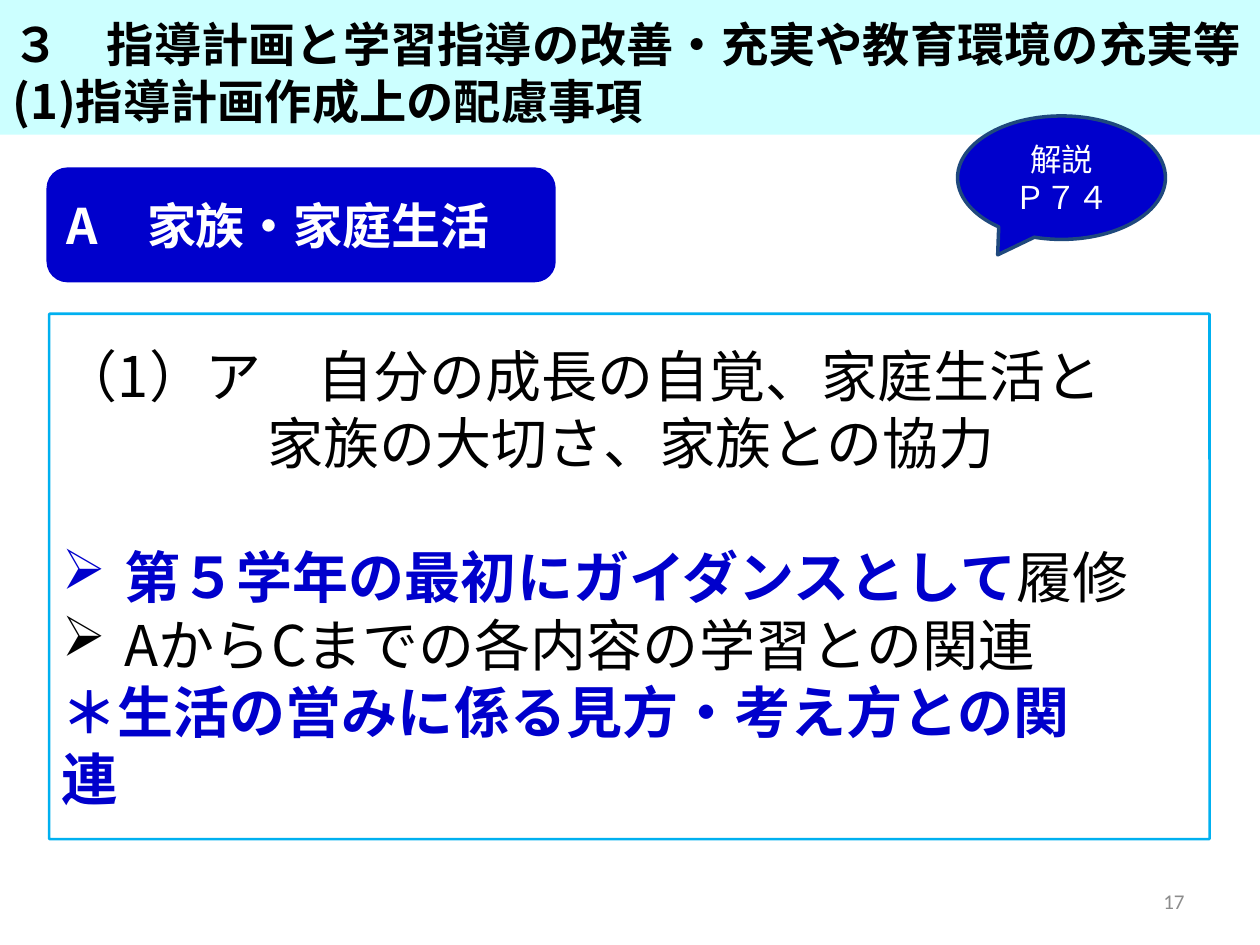
import dataclasses

import pptx
import pptx.dml.color
import pptx.enum.shapes
import pptx.enum.text
import pptx.oxml.ns
import pptx.util
from lxml import etree

Inches = pptx.util.Inches
Pt = pptx.util.Pt
Shapes = pptx.enum.shapes.MSO_SHAPE
Align = pptx.enum.text.PP_ALIGN
Anchor = pptx.enum.text.MSO_ANCHOR
qn = pptx.oxml.ns.qn


@dataclasses.dataclass(frozen=True)
class Theme:
    japanese_font: str = "Noto Sans CJK JP"
    number_font: str = "Calibri"
    black: str = "000000"
    white: str = "FFFFFF"
    blue: str = "0000CC"
    pale_cyan: str = "CCFFFF"
    cyan: str = "00B0F0"
    navy: str = "1F497D"
    grey: str = "8C8C8C"
    title_size: float = 27
    section_size: float = 28
    body_size: float = 32
    callout_size: float = 18
    number_size: float = 12
    line_height: float = 1.2


THEME = Theme()


def rgb(color):
    return pptx.dml.color.RGBColor.from_string(color)


def add_panel(slide, kind, box, fill=None, line=None, width=0,
              anchor=Anchor.MIDDLE, adjustments=()):
    shape = slide.shapes.add_shape(kind, *map(Inches, box))
    shape.shadow.inherit = False
    for index, value in enumerate(adjustments):
        shape.adjustments[index] = value
    if fill:
        shape.fill.solid()
        shape.fill.fore_color.rgb = rgb(fill)
    else:
        shape.fill.background()
    if line:
        shape.line.color.rgb = rgb(line)
        shape.line.width = Pt(width)
    else:
        shape.line.fill.background()
    shape.text_frame.word_wrap = True
    shape.text_frame.vertical_anchor = anchor
    return shape


def style_paragraph(paragraph, size, color, bold=False, align=Align.LEFT,
                    font=THEME.japanese_font):
    paragraph.alignment = align
    paragraph.line_spacing = Pt(size * THEME.line_height)
    paragraph.font.size = Pt(size)
    paragraph.font.bold = bold
    paragraph.font.color.rgb = rgb(color)
    paragraph.font.name = font
    defaults = paragraph.font._element
    defaults.find(qn("a:latin")).addnext(
        etree.Element(qn("a:ea"), typeface=font))


def write_lines(shape, lines, **style):
    frame = shape.text_frame
    paragraphs = []
    for index, line in enumerate(lines):
        paragraph = frame.add_paragraph() if index else frame.paragraphs[0]
        paragraph.text = line
        style_paragraph(paragraph, **style)
        paragraphs.append(paragraph)
    return paragraphs


def set_indent(paragraph, left, first=0, bullet=None):
    properties = paragraph._p.get_or_add_pPr()
    properties.set("marL", str(Inches(left)))
    properties.set("indent", str(Inches(first)))
    if bullet:
        character = etree.Element(qn("a:buChar"), char=bullet)
        properties.find(qn("a:defRPr")).addprevious(character)


def emphasize(run):
    run.font.bold = True
    run.font.color.rgb = rgb(THEME.blue)


def add_title(slide):
    banner = add_panel(slide, Shapes.RECTANGLE, (0, -0.03, 10, 1.1),
                       fill=THEME.pale_cyan, anchor=Anchor.BOTTOM)
    write_lines(banner, ["３　指導計画と学習指導の改善・充実や教育環境の充実等",
                         "(1)指導計画作成上の配慮事項"],
                size=THEME.title_size, color=THEME.black, bold=True)


def add_section_label(slide):
    label = add_panel(slide, Shapes.ROUNDED_RECTANGLE, (0.39, 1.35, 4, 0.87),
                      fill=THEME.blue, line=THEME.blue, width=3)
    write_lines(label, ["A　家族・家庭生活"],
                size=THEME.section_size, color=THEME.white, bold=True)


def add_content_box(slide):
    box = add_panel(slide, Shapes.ROUNDED_RECTANGLE, (0.39, 2.49, 9.21, 4.17),
                    line=THEME.cyan, width=1.5, adjustments=[0.002])
    heading, continuation, guidance, relation, viewpoint = write_lines(
        box, ["（1）ア　自分の成長の自覚、家庭生活と",
              "家族の大切さ、家族との協力",
              "第５学年の最初にガイダンスとして",
              "AからCまでの各内容の学習との関連",
              "＊生活の営みに係る見方・考え方との関\v連"],
        size=THEME.body_size, color=THEME.black)
    heading.alignment = Align.JUSTIFY
    set_indent(continuation, 1.63)
    guidance.space_before = Pt(THEME.body_size * THEME.line_height)
    for paragraph in (guidance, relation):
        set_indent(paragraph, 0.5, -0.5, "➢")
    emphasize(guidance.runs[0])
    guidance.add_run().text = "履修"
    for run in viewpoint.runs:
        emphasize(run)


def add_callout(slide):
    callout = add_panel(slide, Shapes.OVAL_CALLOUT, (7.6, 0.92, 1.65, 0.98),
                        fill=THEME.blue, line=THEME.navy, width=2,
                        adjustments=[-0.307, 0.625])
    write_lines(callout, ["解説", "Ｐ７４"], size=THEME.callout_size,
                color=THEME.white, align=Align.CENTER)


def add_page_number(slide):
    text_box = slide.shapes.add_textbox(*map(Inches, (7.17, 6.95, 2.33, 0.4)))
    text_box.text_frame.word_wrap = True
    text_box.text_frame.vertical_anchor = Anchor.MIDDLE
    write_lines(text_box, ["17"], size=THEME.number_size, color=THEME.grey,
                align=Align.RIGHT, font=THEME.number_font)


def main():
    presentation = pptx.Presentation()
    presentation.slide_width = Inches(10)
    presentation.slide_height = Inches(7.5)
    slide = presentation.slides.add_slide(presentation.slide_layouts[6])
    add_title(slide)
    add_section_label(slide)
    add_content_box(slide)
    add_callout(slide)
    add_page_number(slide)
    presentation.save("out.pptx")


if __name__ == "__main__":
    main()
